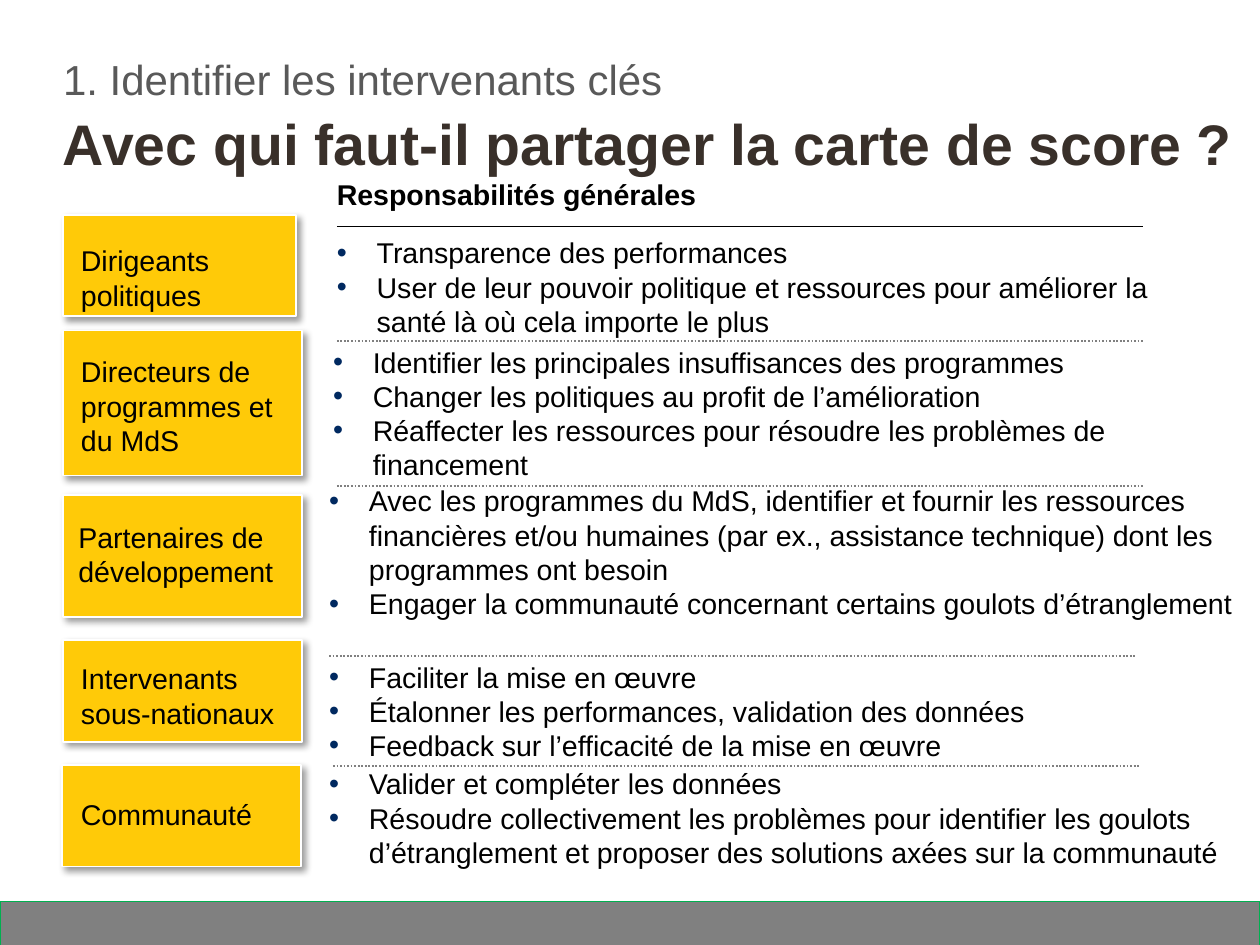
"""Build the slide on who should receive the scorecard."""
from dataclasses import dataclass

import pptx
import pptx.dml.color
import pptx.enum.dml
import pptx.enum.shapes
import pptx.enum.text
import pptx.oxml
import pptx.oxml.ns
import pptx.shapes.autoshape
import pptx.slide
import pptx.util
from pptx.util import Inches


@dataclass(frozen=True)
class Theme:
    """Colours, font and type sizes."""
    font: str = "Arial"
    title: str = "39302A"
    subtitle: str = "595959"
    text: str = "000000"
    bullet: str = "002960"
    box: str = "FFCA08"
    box_line: str = "FFFFFF"
    divider: str = "808080"
    footer: str = "808080"
    footer_line: str = "00B050"
    title_size: float = 32
    subtitle_size: float = 23.5
    body_size: float = 16


@dataclass(frozen=True)
class Frame:
    """Left, top, width and height in inches."""
    left: float
    top: float
    width: float
    height: float

    def lengths(self) -> tuple[int, ...]:
        """Return the four lengths for python-pptx."""
        return tuple(Inches(value) for value in (self.left, self.top, self.width, self.height))


@dataclass(frozen=True)
class Stakeholder:
    """A group with its box and its responsibilities."""
    name: str
    box: Frame
    label: Frame
    duties_frame: Frame
    duties: tuple[str, ...]


@dataclass(frozen=True)
class Rule:
    """A horizontal line across the right column."""
    left: float
    top: float
    colour: str
    weight: float
    dotted: bool = True


THEME = Theme()
RULE_WIDTH = 6.27
BULLET_INDENT = 0.31
DRAWING_NAMESPACE = pptx.oxml.ns.nsdecls("a")

STAKEHOLDERS = (
    Stakeholder("Dirigeants politiques",
                Frame(0.49, 1.67, 1.81, 0.79), Frame(0.63, 1.89, 1.64, 0.54),
                Frame(2.62, 1.83, 6.58, 0.81),
                ("Transparence des performances",
                 "User de leur pouvoir politique et ressources pour améliorer la "
                 "santé là où cela importe le plus")),
    Stakeholder("Directeurs de programmes et du MdS",
                Frame(0.49, 2.57, 1.86, 1.13), Frame(0.63, 2.75, 1.71, 0.81),
                Frame(2.59, 2.68, 7.02, 1.08),
                ("Identifier les principales insuffisances des programmes",
                 "Changer les politiques au profit de l’amélioration",
                 "Réaffecter les ressources pour résoudre les problèmes de financement")),
    Stakeholder("Partenaires de développement",
                Frame(0.49, 3.85, 1.86, 0.95), Frame(0.61, 4.04, 1.64, 0.54),
                Frame(2.56, 3.76, 7.05, 1.08),
                ("Avec les programmes du MdS, identifier et fournir les ressources "
                 "financières et/ou humaines (par ex., assistance technique) dont les "
                 "programmes ont besoin",
                 "Engager la communauté concernant certains goulots d’étranglement")),
    Stakeholder("Intervenants sous-nationaux",
                Frame(0.49, 4.98, 1.86, 0.79), Frame(0.63, 5.14, 1.64, 0.54),
                Frame(2.56, 5.13, 6.27, 0.81),
                ("Faciliter la mise en œuvre",
                 "Étalonner les performances, validation des données",
                 "Feedback sur l’efficacité de la mise en œuvre")),
    Stakeholder("Communauté",
                Frame(0.48, 5.95, 1.86, 0.79), Frame(0.63, 6.2, 1.64, 0.27),
                Frame(2.56, 5.96, 6.97, 0.81),
                ("Valider et compléter les données",
                 "Résoudre collectivement les problèmes pour identifier les goulots "
                 "d’étranglement et proposer des solutions axées sur la communauté")),
)

RULES = (
    Rule(2.62, 1.76, THEME.text, 0.75, dotted=False),
    Rule(2.62, 2.65, THEME.divider, 1),
    Rule(2.62, 3.78, THEME.divider, 1),
    Rule(2.56, 5.1, THEME.divider, 1),
    Rule(2.59, 5.96, THEME.divider, 1),
)


def rgb(colour: str) -> pptx.dml.color.RGBColor:
    """Turn a hexadecimal string into a colour."""
    return pptx.dml.color.RGBColor.from_string(colour)


def add_text(slide: pptx.slide.Slide, frame: Frame, lines: tuple[str, ...],
             size: float = THEME.body_size, colour: str = THEME.text, bold: bool = False,
             bulleted: bool = False, middle: bool = False, spacing: float = 1.0) -> None:
    """Add a wrapping text box without insets."""
    text_frame = slide.shapes.add_textbox(*frame.lengths()).text_frame
    text_frame.word_wrap = True
    text_frame.margin_left = text_frame.margin_right = 0
    text_frame.margin_top = text_frame.margin_bottom = 0
    anchors = pptx.enum.text.MSO_ANCHOR
    text_frame.vertical_anchor = anchors.MIDDLE if middle else anchors.TOP
    for index, line in enumerate(lines):
        paragraph = text_frame.add_paragraph() if index else text_frame.paragraphs[0]
        paragraph.line_spacing = spacing
        if bulleted:
            add_bullet(paragraph)
        run = paragraph.add_run()
        run.text = line
        run.font.name = THEME.font
        run.font.size = pptx.util.Pt(size)
        run.font.bold = bold
        run.font.color.rgb = rgb(colour)


def add_bullet(paragraph: pptx.text.text._Paragraph) -> None:
    """Give a paragraph a coloured bullet and a hanging indent."""
    properties = paragraph._p.get_or_add_pPr()
    properties.set("marL", str(Inches(BULLET_INDENT)))
    properties.set("indent", str(Inches(-BULLET_INDENT)))
    for element in (f'<a:buClr {DRAWING_NAMESPACE}><a:srgbClr val="{THEME.bullet}"/></a:buClr>',
                    f'<a:buFont {DRAWING_NAMESPACE} typeface="{THEME.font}"/>',
                    f'<a:buChar {DRAWING_NAMESPACE} char="•"/>'):
        properties.append(pptx.oxml.parse_xml(element))


def add_rectangle(slide: pptx.slide.Slide, frame: Frame, fill: str, line: str,
                  weight: float) -> pptx.shapes.autoshape.Shape:
    """Add a filled and outlined rectangle without shadow."""
    shape = slide.shapes.add_shape(pptx.enum.shapes.MSO_SHAPE.RECTANGLE, *frame.lengths())
    shape.shadow.inherit = False
    shape.fill.solid()
    shape.fill.fore_color.rgb = rgb(fill)
    shape.line.color.rgb = rgb(line)
    shape.line.width = pptx.util.Pt(weight)
    return shape


def add_shadow(shape: pptx.shapes.autoshape.Shape) -> None:
    """Cast a soft shadow down and to the right."""
    effects = shape._element.spPr.find(pptx.oxml.ns.qn("a:effectLst"))
    effects.append(pptx.oxml.parse_xml(
        f'<a:outerShdw {DRAWING_NAMESPACE} blurRad="{pptx.util.Pt(4)}" '
        f'dist="{pptx.util.Pt(3)}" dir="2700000" algn="tl" rotWithShape="0">'
        '<a:srgbClr val="000000"><a:alpha val="40000"/></a:srgbClr></a:outerShdw>'))


def add_rule(slide: pptx.slide.Slide, rule: Rule) -> None:
    """Add a solid or dotted horizontal line."""
    connector = slide.shapes.add_connector(
        pptx.enum.shapes.MSO_CONNECTOR.STRAIGHT, Inches(rule.left), Inches(rule.top),
        Inches(rule.left + RULE_WIDTH), Inches(rule.top))
    connector.line.color.rgb = rgb(rule.colour)
    connector.line.width = pptx.util.Pt(rule.weight)
    if rule.dotted:
        connector.line.dash_style = pptx.enum.dml.MSO_LINE.ROUND_DOT
    connector._element.spPr.append(pptx.oxml.parse_xml(f"<a:effectLst {DRAWING_NAMESPACE}/>"))


def main() -> None:
    """Assemble and save the slide."""
    presentation = pptx.Presentation()
    presentation.slide_width, presentation.slide_height = Inches(9.8), Inches(7.35)
    slide = presentation.slides.add_slide(presentation.slide_layouts[6])
    add_rectangle(slide, Frame(0, 7.01, 9.8, 0.37), THEME.footer, THEME.footer_line, 0.75)
    add_text(slide, Frame(0.49, 0.84, 9.16, 0.54),
             ("Avec qui faut-il partager la carte de score ?",),
             THEME.title_size, THEME.title, bold=True)
    add_text(slide, Frame(0.49, 0.46, 8.82, 0.36), ("1. Identifier les intervenants clés",),
             THEME.subtitle_size, THEME.subtitle, spacing=0.9)
    add_text(slide, Frame(2.62, 1.38, RULE_WIDTH, 0.27), ("Responsabilités générales",), bold=True)
    for rule in RULES:
        add_rule(slide, rule)
    for stakeholder in STAKEHOLDERS:
        add_shadow(add_rectangle(slide, stakeholder.box, THEME.box, THEME.box_line, 1))
        add_text(slide, stakeholder.label, (stakeholder.name,), middle=True)
        add_text(slide, stakeholder.duties_frame, stakeholder.duties, bulleted=True)
    presentation.save("out.pptx")


if __name__ == "__main__":
    main()
